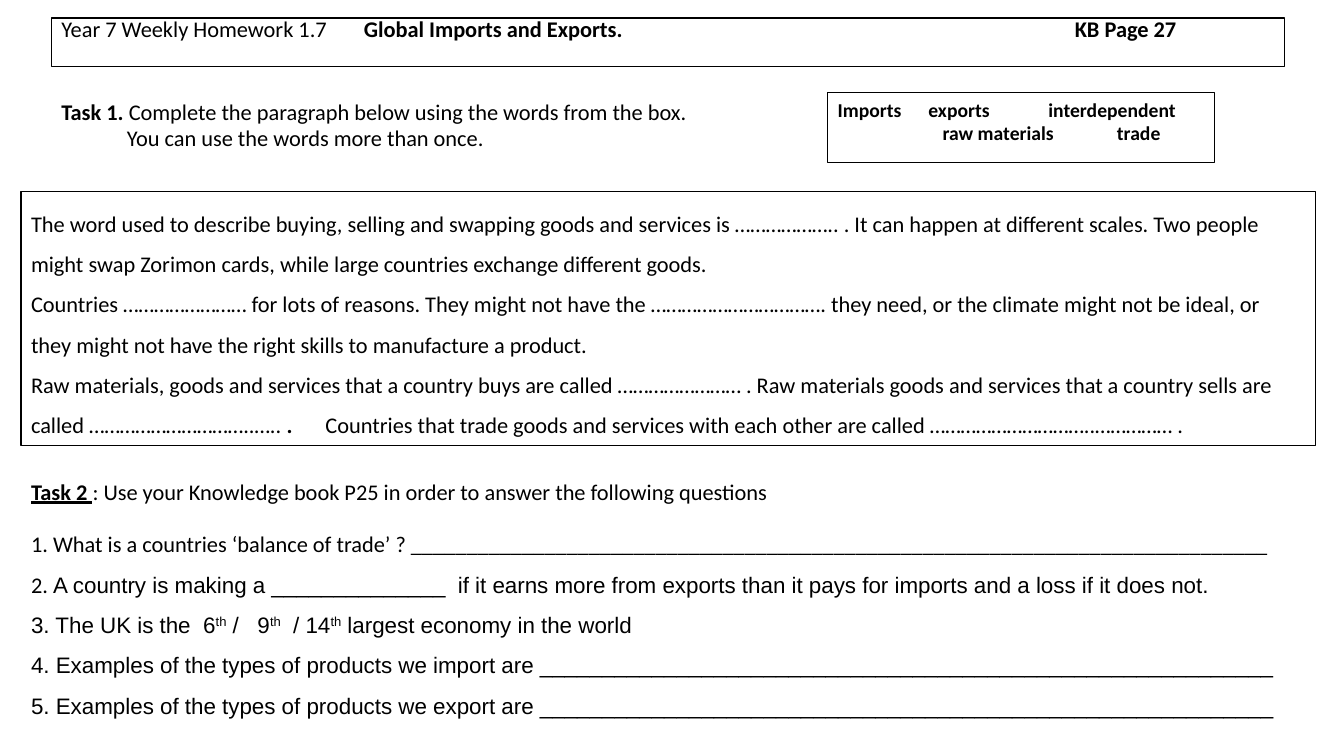
import pptx
import pptx.util
import pptx.dml.color
import pptx.enum.shapes
import pptx.enum.text
import pptx.oxml.ns
from lxml import etree

Inches, Pt = pptx.util.Inches, pptx.util.Pt
BLACK, WHITE = "000000", "FFFFFF"
BOLD = {"bold": True}
ARIAL = {"font": "Arial"}
SUPER = {"font": "Arial", "raised": True}


def color(hex_string):
    return pptx.dml.color.RGBColor.from_string(hex_string)


def outline(sp, width):
    sp.fill.solid()
    sp.fill.fore_color.rgb = color(WHITE)
    sp.line.color.rgb = color(BLACK)
    sp.line.width = Pt(width)


def add_run(p, text, size, font="Calibri", bold=False, underline=False, raised=False):
    r = p.add_run()
    r.text = text
    r.font.size = Pt(size)
    r.font.name = font
    r.font.bold = bold
    r.font.underline = underline
    r.font.color.rgb = color(BLACK)
    if raised:
        r.font._element.set("baseline", "30000")


def add_tabs(p, stops):
    tab_list = etree.SubElement(p._p.get_or_add_pPr(), pptx.oxml.ns.qn("a:tabLst"))
    for stop in stops:
        etree.SubElement(tab_list, pptx.oxml.ns.qn("a:tab"), pos=str(Inches(stop)), algn="l")


def write(tf, paragraphs, size=16):
    """Fill a frame with (runs, options) paragraphs; a run is (text, format)."""
    tf.word_wrap = True
    tf.auto_size = pptx.enum.text.MSO_AUTO_SIZE.NONE
    tf.vertical_anchor = pptx.enum.text.MSO_ANCHOR.TOP
    for i, (runs, options) in enumerate(paragraphs):
        p = tf.paragraphs[0] if i == 0 else tf.add_paragraph()
        p.alignment = pptx.enum.text.PP_ALIGN.LEFT
        p.line_spacing = options.get("spacing", 1.0)
        p.space_before = Pt(options.get("before", 0))
        if "indent" in options:
            p._p.get_or_add_pPr().set("marL", str(Inches(options["indent"])))
        if "tabs" in options:
            add_tabs(p, options["tabs"])
        for text, style in runs:
            add_run(p, text, size, **style)


def add_title(s, x, y, w, h, runs, tabs):
    sp = s.shapes.title
    sp.left, sp.top, sp.width, sp.height = map(Inches, (x, y, w, h))
    outline(sp, 1)
    sp.text_frame.margin_top = 0
    write(sp.text_frame, [(runs, {"spacing": 0.9, "tabs": tabs})])


def add_box(s, x, y, w, h, paragraphs, size=16, line=1):
    sp = s.shapes.add_shape(pptx.enum.shapes.MSO_SHAPE.RECTANGLE, *map(Inches, (x, y, w, h)))
    sp.shadow.inherit = False
    outline(sp, line)
    write(sp.text_frame, paragraphs, size)


def add_text(s, x, y, w, h, paragraphs):
    sp = s.shapes.add_textbox(*map(Inches, (x, y, w, h)))
    write(sp.text_frame, paragraphs)


def main():
    prs = pptx.Presentation()
    prs.slide_width, prs.slide_height = Inches(13.33), Inches(7.5)
    s = prs.slides.add_slide(prs.slide_layouts[5])
    wide = {"spacing": 1.5}

    add_title(s, 0.51, 0.18, 12.23, 0.48, [
        ("Year 7 Weekly Homework 1.7\t", {}),
        ("Global Imports and Exports.\tKB Page 27", BOLD),
    ], tabs=[3.0, 10.05])

    add_box(s, 0.21, 1.9, 12.84, 2.52, [
        ([("The word used to describe buying, selling and swapping goods and services is "
           "……………….. . It can happen at different scales. Two people might swap Zorimon "
           "cards, while large countries exchange different goods.", {})], wide),
        ([("Countries …………………… for lots of reasons. They might not have the "
           "……………………………. they need, or the climate might not be ideal, or they might "
           "not have the right skills to manufacture a product.", {})], wide),
        ([("Raw materials, goods and services that a country buys are called "
           "…………………… . Raw materials goods and services that a country sells are called "
           "…………………………..….. ", {}),
          (".\t", BOLD),
          ("Countries that trade goods and services with each other are called "
           "…………………………..…………… .", {})], {"spacing": 1.5, "tabs": [2.92]}),
    ])

    add_box(s, 8.21, 0.92, 3.84, 0.69, [
        ([("Imports\texports\tinterdependent", BOLD)], {"tabs": [0.9, 2.09]}),
        ([("\traw materials\ttrade", BOLD)], {"tabs": [1.04, 2.77]}),
    ], size=14, line=0.75)

    add_text(s, 0.51, 0.92, 7.55, 0.64, [
        ([("Task 1. ", BOLD),
          ("Complete the paragraph below using the words from the box.", {})], {}),
        ([("You can use the words more than once.", {})], {"indent": 0.65}),
    ])

    product_questions = [
        ([(f"{number}. Examples of the types of products we {verb} are " + "_" * 59, ARIAL)], wide)
        for number, verb in ((4, "import"), (5, "export"))
    ]
    add_text(s, 0.21, 4.69, 12.84, 2.52, [
        ([("Task 2 ", {"bold": True, "underline": True}),
          (": Use your Knowledge book P25 in order to answer the following questions", {})], {}),
        ([("1. What is a countries ‘balance of trade’ ? " + "_" * 77, {})], {"before": 18.5}),
        ([("2. ", {}),
          ("A country is making a " + "_" * 14 + "  if it earns more from exports than it "
           "pays for imports and a loss if it does not.", ARIAL)], wide),
        ([("3. The UK is the  6", ARIAL), ("th", SUPER),
          (" /   9", ARIAL), ("th", SUPER),
          ("  / 14", ARIAL), ("th", SUPER),
          (" largest economy in the world", ARIAL)], wide),
        *product_questions,
    ])

    prs.save("out.pptx")


if __name__ == "__main__":
    main()
